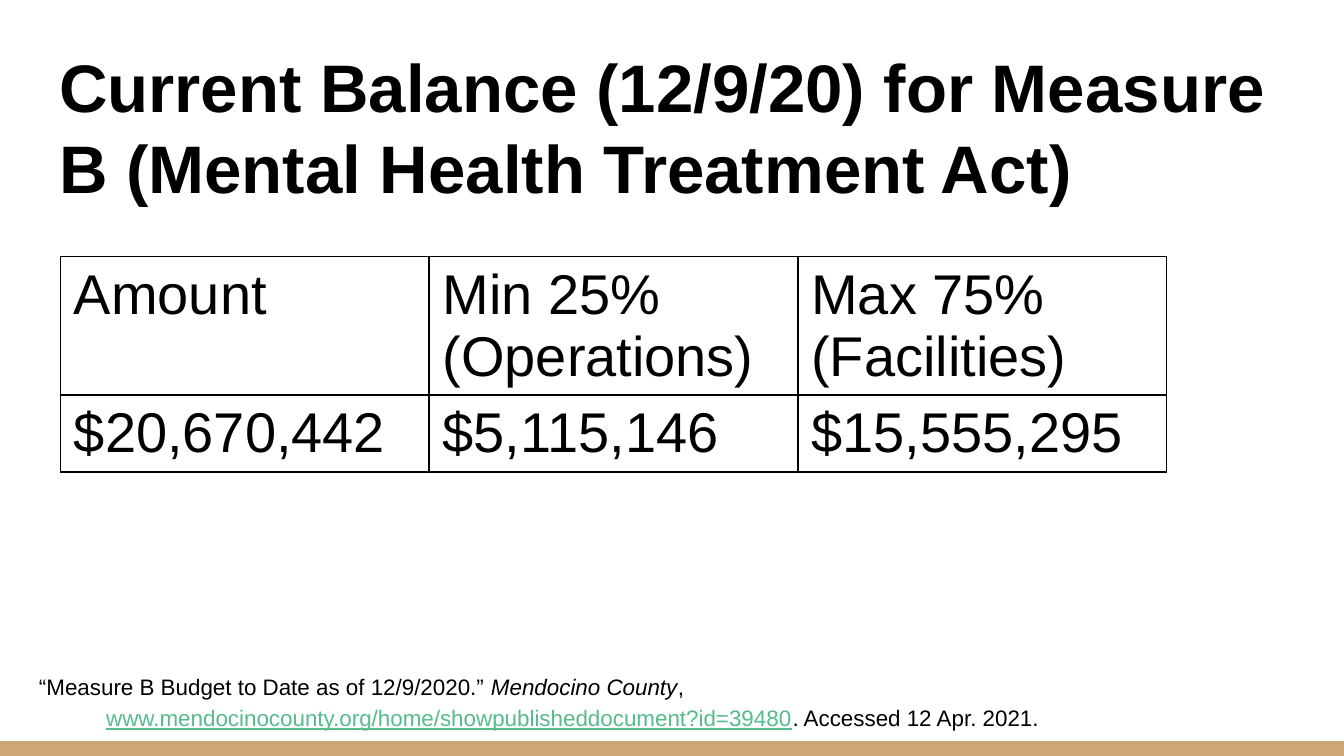
from dataclasses import dataclass

from lxml import etree
from pptx import Presentation
from pptx.dml.color import RGBColor
from pptx.enum.shapes import MSO_SHAPE
from pptx.enum.text import MSO_ANCHOR, MSO_AUTO_SIZE, PP_ALIGN
from pptx.oxml.ns import qn
from pptx.util import Inches, Pt

RECTANGLE = MSO_SHAPE.RECTANGLE
TOP = MSO_ANCHOR.TOP
NO_AUTOFIT = MSO_AUTO_SIZE.NONE
LEFT = PP_ALIGN.LEFT

BLACK = RGBColor(0x00, 0x00, 0x00)
WHITE = RGBColor(0xFF, 0xFF, 0xFF)
TAN = RGBColor(0xCC, 0xA6, 0x77)
GREEN = RGBColor(0x57, 0xBB, 0x8A)

FONT = "Arial"
PAGE_WIDTH = 10
PAGE_HEIGHT = PAGE_WIDTH * 9 / 16
TABLE_WIDTH = 8.23
ROW_HEIGHTS = (1.03, 0.57)


@dataclass(frozen=True)
class Span:
    text: str
    size: float
    color: RGBColor = BLACK
    bold: bool = False
    italic: bool = False
    underline: bool = False


@dataclass(frozen=True)
class Area:
    left: float
    top: float
    width: float
    height: float

    def lengths(self) -> tuple:
        return tuple(Inches(v) for v in (self.left, self.top, self.width, self.height))


TITLE = [Span("Current Balance (12/9/20) for Measure B (Mental Health Treatment Act)", 36, bold=True)]
CITATION = [
    Span("“Measure B Budget to Date as of 12/9/2020.” ", 12),
    Span("Mendocino County", 12, italic=True),
    Span(", ", 12),
    Span("www.mendocinocounty.org/home/showpublisheddocument?id=39480", 12, GREEN, underline=True),
    Span(". Accessed 12 Apr. 2021.", 12),
]
BALANCE = (
    ("Amount", "Min 25% (Operations)", "Max 75% (Facilities)"),
    ("$20,670,442", "$5,115,146", "$15,555,295"),
)


def write_spans(para, spans: list[Span]) -> None:
    for span in spans:
        run = para.add_run()
        run.text = span.text
        formats = {
            "name": FONT,
            "size": Pt(span.size),
            "bold": span.bold,
            "italic": span.italic,
            "underline": span.underline,
        }
        for name, value in formats.items():
            setattr(run.font, name, value)
        run.font.color.rgb = span.color


def fill_placeholder(box, area: Area, spans: list[Span], line_spacing: float):
    box.left, box.top, box.width, box.height = area.lengths()
    frame = box.text_frame
    margin = Inches(0.1)
    formats = {
        "word_wrap": True,
        "auto_size": NO_AUTOFIT,
        "vertical_anchor": TOP,
        "margin_left": margin,
        "margin_top": margin,
        "margin_right": margin,
        "margin_bottom": margin,
    }
    for name, value in formats.items():
        setattr(frame, name, value)
    para = frame.paragraphs[0]
    para.alignment = LEFT
    para.line_spacing = line_spacing
    para.space_before = Pt(0)
    write_spans(para, spans)
    return para


def hang_without_bullet(para, indent: float) -> None:
    properties = para._p.get_or_add_pPr()
    properties.set("marL", str(Inches(indent)))
    properties.set("indent", str(-Inches(indent)))
    etree.SubElement(properties, qn("a:buNone"))


def outline_cell(cell) -> None:
    properties = cell._tc.get_or_add_tcPr()
    for position, side in enumerate(("lnL", "lnR", "lnT", "lnB")):
        line = etree.Element(qn(f"a:{side}"), w=str(Pt(1)))
        solid = etree.SubElement(line, qn("a:solidFill"))
        etree.SubElement(solid, qn("a:srgbClr"), val=str(BLACK))
        properties.insert(position, line)


def draw_balance_table(page, left: float, top: float) -> None:
    area = Area(left, top, TABLE_WIDTH, sum(ROW_HEIGHTS))
    table = page.shapes.add_table(len(BALANCE), len(BALANCE[0]), *area.lengths()).table
    table.first_row = False
    table.horz_banding = False
    for row, height, texts in zip(table.rows, ROW_HEIGHTS, BALANCE):
        row.height = Inches(height)
        for cell, text in zip(row.cells, texts):
            cell.fill.background()
            outline_cell(cell)
            write_spans(cell.text_frame.paragraphs[0], [Span(text, 30)])


def draw_footer_bar(page, area: Area) -> None:
    bar = page.shapes.add_shape(RECTANGLE, *area.lengths())
    bar.shadow.inherit = False
    bar.fill.solid()
    bar.fill.fore_color.rgb = TAN
    bar.line.fill.background()


def main() -> None:
    deck = Presentation()
    deck.slide_width = Inches(PAGE_WIDTH)
    deck.slide_height = Inches(PAGE_HEIGHT)
    page = deck.slides.add_slide(deck.slide_layouts[1])
    page.background.fill.solid()
    page.background.fill.fore_color.rgb = WHITE

    bar_height = 0.11
    draw_footer_bar(page, Area(0, PAGE_HEIGHT - bar_height, PAGE_WIDTH, bar_height))
    citation = fill_placeholder(page.placeholders[1], Area(0.19, 4.88, 9.32, 0.47), CITATION, 1.15)
    hang_without_bullet(citation, 0.5)
    fill_placeholder(page.shapes.title, Area(0.34, 0.24, 9.28, 0.47), TITLE, 1)
    draw_balance_table(page, 0.45, 1.91)
    deck.save("out.pptx")


if __name__ == "__main__":
    main()
